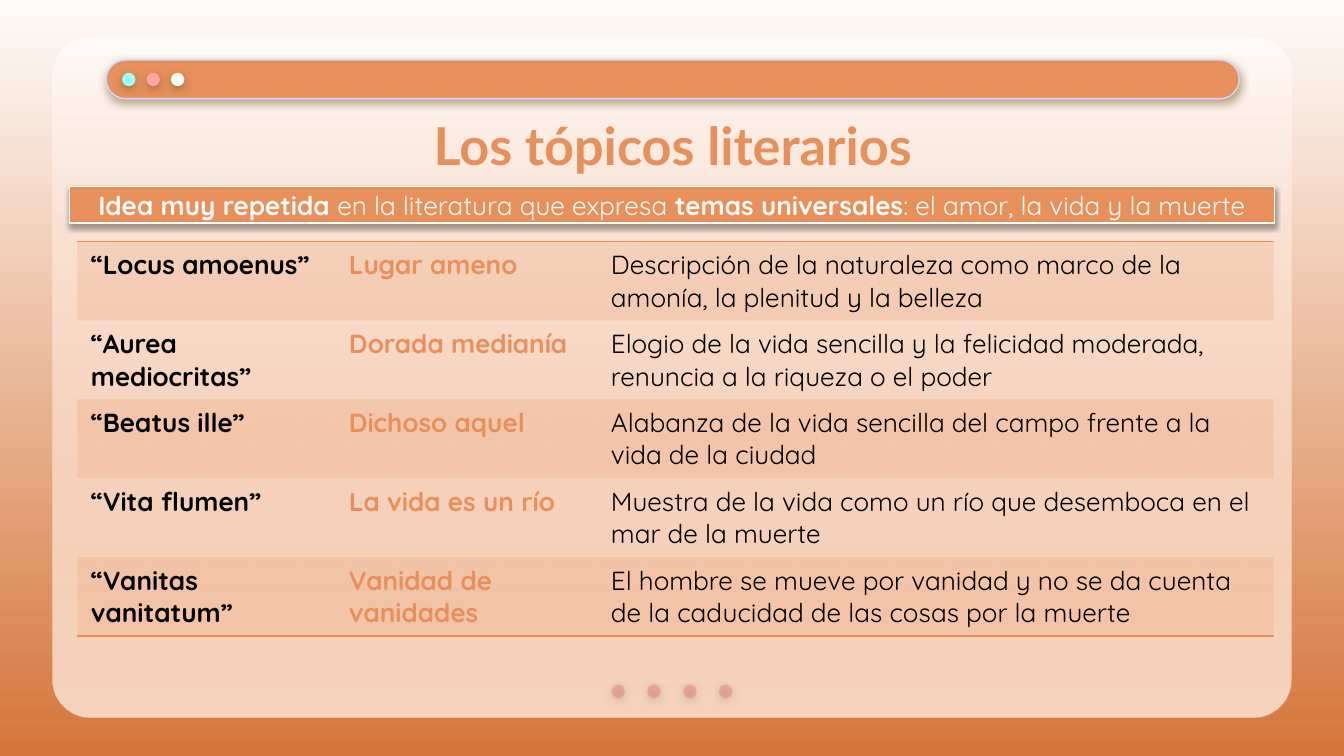
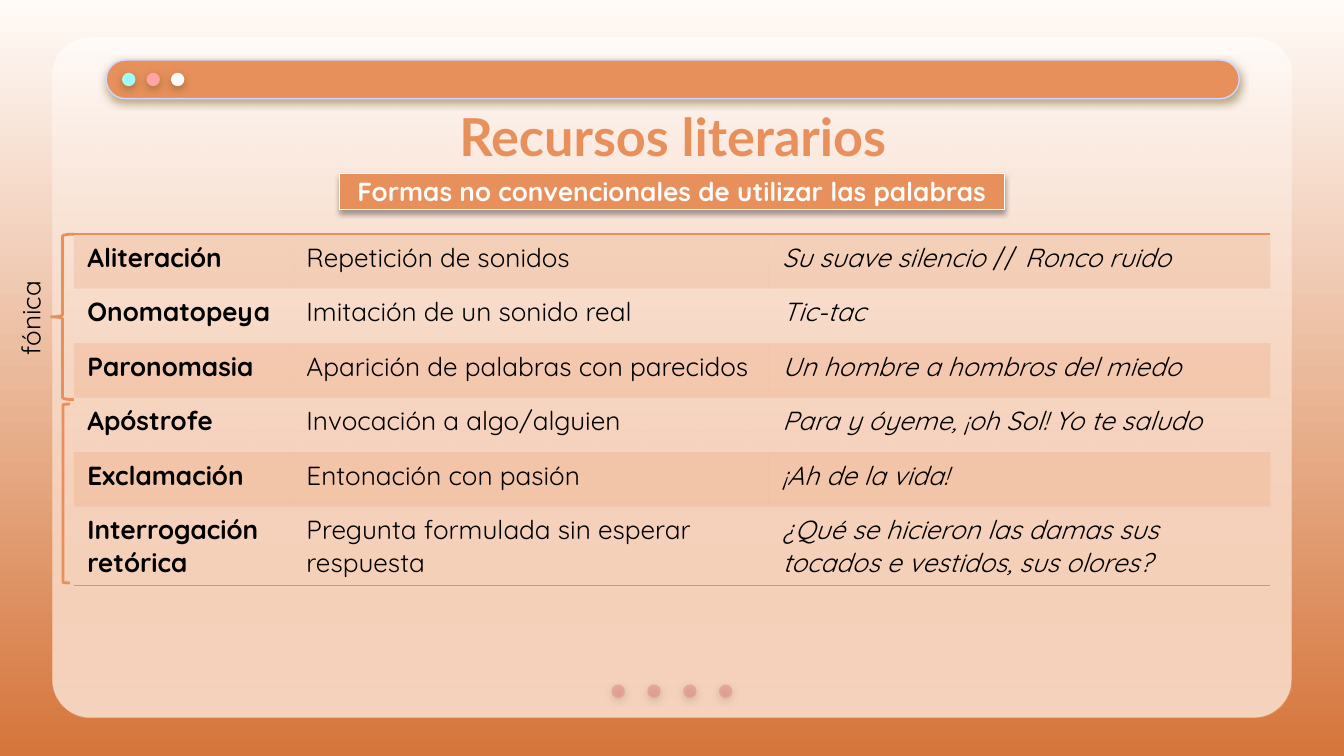
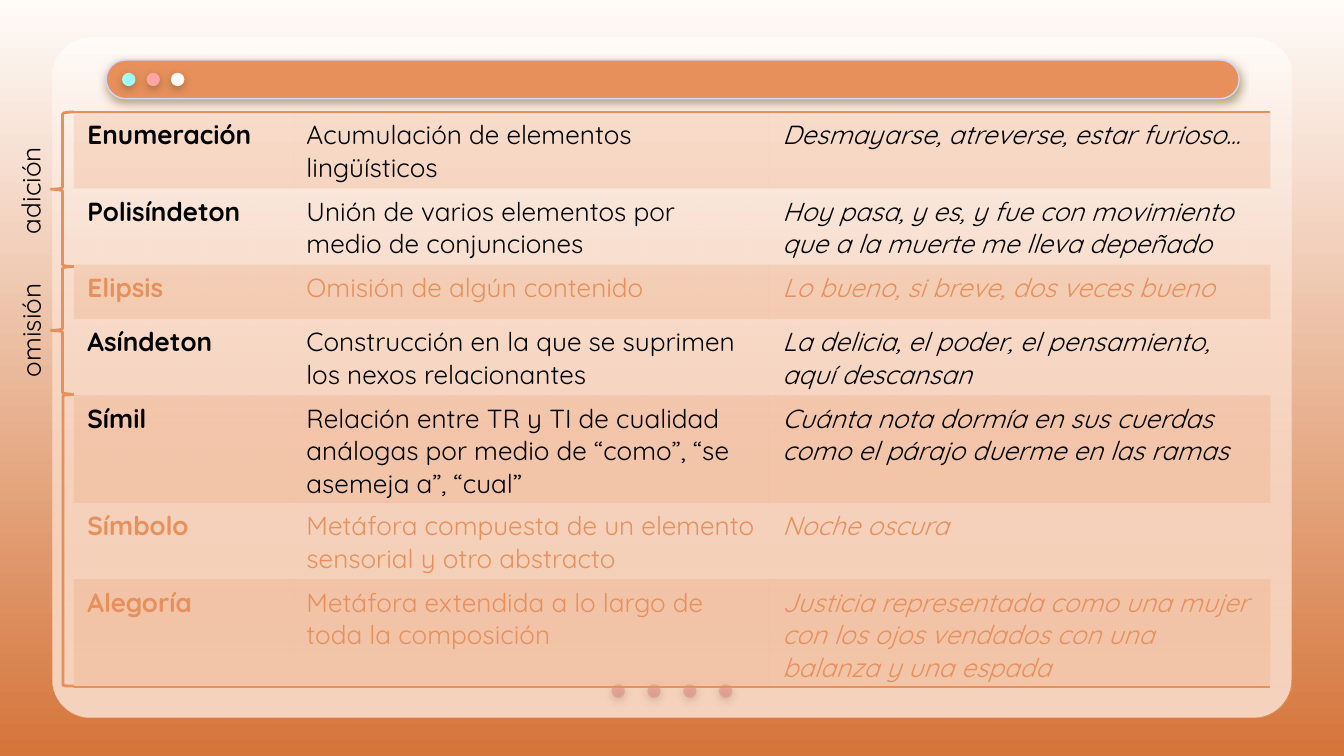
from lxml import etree
from pptx import Presentation
from pptx import util as u
from pptx.dml.color import RGBColor
from pptx.enum import shapes, text
from pptx.oxml.ns import qn

CREAM = RGBColor(0xFF, 0xFB, 0xF8)
RUST = RGBColor(0xD5, 0x75, 0x3B)
ORANGE = RGBColor(0xE7, 0x90, 0x5C)
ROSE = RGBColor(0xE2, 0x7B, 0x83)
LILAC = RGBColor(0xD2, 0xD6, 0xFF)
CYAN = RGBColor(0xA0, 0xFD, 0xFD)
PINK = RGBColor(0xFF, 0xA4, 0xA4)
BLACK = RGBColor(0, 0, 0)
BROWN = RGBColor(0x6D, 0x54, 0x16)

TITLE_FONT, BODY_FONT = "Lato", "Quicksand"
NO_GRID = "{2D5ABB26-0587-4C30-8999-92F81FD0307C}"
SOFT_GLOW = (BROWN, 50, 4.5, 1.5)
BANNER_SHADOW = (BLACK, 35, 3.1, 1.8)
FORM = shapes.MSO_SHAPE

TOPIC_COLUMNS = [(138.2, BLACK, "b"), (140.4, ORANGE, "b"), (362.2, BLACK, "")]
DEVICE_COLUMNS = [(117.4, BLACK, "b"), (255, BLACK, ""), (268.6, BLACK, "i")]

TOPICS = [
    ("“Locus amoenus”", "Lugar ameno",
     "Descripción de la naturaleza como marco de la amonía, la plenitud y la belleza"),
    ("“Aurea mediocritas”", "Dorada medianía",
     "Elogio de la vida sencilla y la felicidad moderada, renuncia a la riqueza o el poder"),
    ("“Beatus ille”", "Dichoso aquel",
     "Alabanza de la vida sencilla del campo frente a la vida de la ciudad"),
    ("“Vita flumen”", "La vida es un río",
     "Muestra de la vida como un río que desemboca en el mar de la muerte"),
    ("“Vanitas vanitatum”", "Vanidad de vanidades",
     "El hombre se mueve por vanidad y no se da cuenta de la caducidad de las cosas por la muerte"),
]
SOUND_DEVICES = [
    ("Aliteración", "Repetición de sonidos", "Su suave silencio |// |Ronco ruido"),
    ("Onomatopeya", "Imitación de un sonido real", "Tic-tac"),
    ("Paronomasia", "Aparición de palabras con parecidos", "Un hombre a hombros del miedo"),
    ("Apóstrofe", "Invocación a algo/alguien", "Para y óyeme, ¡oh Sol! Yo te saludo"),
    ("Exclamación", "Entonación con pasión", "¡Ah de la vida!"),
    ("Interrogación retórica", "Pregunta formulada sin esperar respuesta",
     "¿Qué se hicieron las damas sus tocados e vestidos, sus olores?"),
]
MEANING_DEVICES = [
    ("Enumeración", "Acumulación de elementos lingüísticos",
     "Desmayarse, atreverse, estar furioso..."),
    ("Polisíndeton", "Unión de varios elementos por medio de conjunciones",
     "Hoy pasa, y es, y fue con movimiento que a la muerte me lleva depeñado"),
    ("Elipsis", "Omisión de algún contenido", "Lo bueno, si breve, dos veces bueno"),
    ("Asíndeton", "Construcción en la que se suprimen los nexos relacionantes",
     "La delicia, el poder, el pensamiento, aquí descansan"),
    ("Símil",
     "Relación entre TR y TI de cualidad análogas por medio de “como”, “se asemeja a”, “cual”",
     "Cuánta nota dormía en sus cuerdas\ncomo el párajo duerme en las ramas"),
    ("Símbolo", "Metáfora compuesta de un elemento sensorial y otro abstracto", "Noche oscura"),
    ("Alegoría", "Metáfora extendida a lo largo de toda la composición",
     "Justicia representada como una mujer con los ojos vendados con una balanza y una espada"),
]
HIGHLIGHTED = ("Elipsis", "Símbolo", "Alegoría")


def fade(holder, percent):
    colour = list(holder.iter(qn("a:srgbClr")))[-1]
    etree.SubElement(colour, qn("a:alpha"), val=str(percent * 1000))


def blend(fill, top, bottom):
    fill.gradient()
    fill.gradient_angle = 270
    for stop, colour in zip(fill.gradient_stops, (top, bottom)):
        stop.color.rgb = colour


class Deck:
    def __init__(self):
        self.prs = Presentation()
        self.prs.slide_width, self.prs.slide_height = u.Pt(720), u.Pt(405)
        blend(self.prs.slide_master.background.fill, CREAM, RUST)
        self.slide = None

    def new_slide(self, title=None, top=0):
        layout = self.prs.slide_layouts[5 if title else 6]
        self.slide = self.prs.slides.add_slide(layout)
        self.window()
        if title:
            self.title(title, top)

    def window(self):
        panel = (28.1, 20.2, 663.8, 364.3)
        self.shape(FORM.ROUNDED_RECTANGLE, panel, CREAM, corner=0.056)
        veil = self.shape(FORM.ROUNDED_RECTANGLE, panel, corner=0.056)
        blend(veil.fill, CREAM, ORANGE)
        fade(veil.element.spPr, 37)
        for i in range(4):
            dot = self.shape(FORM.OVAL, (327.6 + 19.2 * i, 366.7, 7.2, 7.2), ROSE)
            fade(dot.element.spPr, 44)
            self.shadow(dot, *SOFT_GLOW)
        bar = self.shape(FORM.ROUNDED_RECTANGLE, (56.9, 32.2, 607, 20.7), ORANGE, LILAC, corner=0.5)
        self.shadow(bar, *SOFT_GLOW)
        for i, colour in enumerate((CYAN, PINK, CREAM)):
            button = self.shape(FORM.OVAL, (65.4 + 13.1 * i, 39, 7.2, 7.2), colour)
            self.shadow(button, *SOFT_GLOW)

    def shape(self, form, box, fill=None, line=None, weight=0.75, corner=None):
        shape = self.slide.shapes.add_shape(form, *map(u.Pt, box))
        shape.shadow.inherit = False
        if corner is not None:
            shape.adjustments[0] = corner
        if fill is None:
            shape.fill.background()
        else:
            shape.fill.solid()
            shape.fill.fore_color.rgb = fill
        if line is None:
            shape.line.fill.background()
        else:
            shape.line.color.rgb = line
            shape.line.width = u.Pt(weight)
        return shape

    def shadow(self, shape, colour, opacity, blur, distance):
        effects = shape.element.spPr.find(qn("a:effectLst"))
        outer = etree.SubElement(effects, qn("a:outerShdw"), blurRad=str(u.Pt(blur)),
                                 dist=str(u.Pt(distance)), dir="5400000", algn="bl", rotWithShape="0")
        etree.SubElement(outer, qn("a:srgbClr"), val=str(colour))
        fade(outer, opacity)

    def wording(self, frame, content, colour, style="", align=text.PP_ALIGN.LEFT,
                font=BODY_FONT, size=14):
        for n, line in enumerate(content.split("\n")):
            paragraph = frame.add_paragraph() if n else frame.paragraphs[0]
            paragraph.alignment = align
            for i, piece in enumerate(line.split("|")):
                run = paragraph.add_run()
                run.text = piece
                run.font.name, run.font.size = font, u.Pt(size)
                run.font.color.rgb = colour
                run.font.bold = style == "b" and i % 2 == 0
                run.font.italic = style == "i" and i % 2 == 0

    def title(self, content, top):
        title = self.slide.shapes.title
        title.element.getparent().append(title.element)
        title.left, title.top, title.width, title.height = map(u.Pt, (56.9, top, 607, 45.4))
        frame = title.text_frame
        frame.auto_size = text.MSO_AUTO_SIZE.NONE
        frame.vertical_anchor = text.MSO_ANCHOR.MIDDLE
        frame.margin_left = frame.margin_right = frame.margin_top = frame.margin_bottom = u.Pt(7.2)
        self.wording(frame, content, ORANGE, "b", text.PP_ALIGN.CENTER, TITLE_FONT, 28)

    def banner(self, content, box):
        banner = self.shape(FORM.RECTANGLE, box, ORANGE, CREAM)
        self.shadow(banner, *BANNER_SHADOW)
        banner.text_frame.vertical_anchor = text.MSO_ANCHOR.MIDDLE
        self.wording(banner.text_frame, content, CREAM, "b", text.PP_ALIGN.CENTER)

    def table(self, rows, columns, left, top, row_height=29.2):
        width = sum(column[0] for column in columns)
        frame = self.slide.shapes.add_table(len(rows), len(columns), u.Pt(left), u.Pt(top),
                                            u.Pt(width), u.Pt(row_height * len(rows)))
        table = frame.table
        table.first_row = table.horz_banding = False
        next(frame.element.iter(qn("a:tableStyleId"))).text = NO_GRID
        for column, (column_width, _, _) in zip(table.columns, columns):
            column.width = u.Pt(column_width)
        for row in table.rows:
            row.height = u.Pt(row_height)
        cells = zip(table.iter_cells(), frame.element.iter(qn("a:tc")))
        for n, (cell, tc) in enumerate(cells):
            r, c = divmod(n, len(columns))
            _, colour, style = columns[c]
            if rows[r][0] in HIGHLIGHTED:
                colour = ORANGE
            self.wording(cell.text_frame, rows[r][c], colour, style)
            if r % 2:
                cell.fill.background()
            else:
                cell.fill.solid()
                cell.fill.fore_color.rgb = ORANGE
                fade(tc.tcPr, 20)
            if r == 0:
                self.border(tc.tcPr, "a:lnT")
            elif r == len(rows) - 1:
                self.border(tc.tcPr, "a:lnB")

    def border(self, properties, side):
        line = etree.Element(qn(side), w=str(u.Pt(1)))
        fill = etree.SubElement(line, qn("a:solidFill"))
        etree.SubElement(fill, qn("a:srgbClr"), val=str(ORANGE))
        properties.insert(0, line)

    def brace(self, top, height):
        self.shape(FORM.LEFT_BRACE, (27.4, top, 12.2, height), line=ORANGE, weight=1.5)

    def bracket(self, top, width, height):
        self.shape(FORM.LEFT_BRACKET, (33.8, top, width, height), line=ORANGE, weight=1.5)

    def side_label(self, content, middle, width):
        height = 24.2
        label = self.slide.shapes.add_textbox(u.Pt(16.4 - width / 2), u.Pt(middle - height / 2),
                                              u.Pt(width), u.Pt(height))
        label.rotation = 270
        label.text_frame.word_wrap = False
        label.text_frame.auto_size = text.MSO_AUTO_SIZE.SHAPE_TO_FIT_TEXT
        self.wording(label.text_frame, content, BLACK)


def main():
    deck = Deck()

    deck.new_slide("Los tópicos literarios", 55)
    deck.banner("Idea muy repetida| en la literatura que expresa |temas universales|"
                ": el amor, la vida y la muerte", (37.3, 100, 645.4, 19.6))
    deck.table(TOPICS, TOPIC_COLUMNS, 41.5, 129.4)

    deck.new_slide("Recursos literarios", 49.8)
    deck.banner("Formas no convencionales de utilizar las palabras", (182, 92.8, 356, 19.6))
    deck.table(SOUND_DEVICES, DEVICE_COLUMNS, 39.6, 125.5)
    deck.brace(125.5, 88.6)
    deck.side_label("fónica", 169.9, 55.4)
    deck.bracket(216.5, 3.6, 95.8)

    deck.new_slide()
    deck.table(MEANING_DEVICES, DEVICE_COLUMNS, 39.6, 60)
    deck.brace(60, 82.8)
    deck.side_label("adición", 101.5, 61.9)
    deck.brace(142.8, 68.4)
    deck.side_label("omisión", 176.4, 65.5)
    deck.bracket(211.4, 5.8, 156.2)

    deck.prs.save("out.pptx")


if __name__ == "__main__":
    main()
